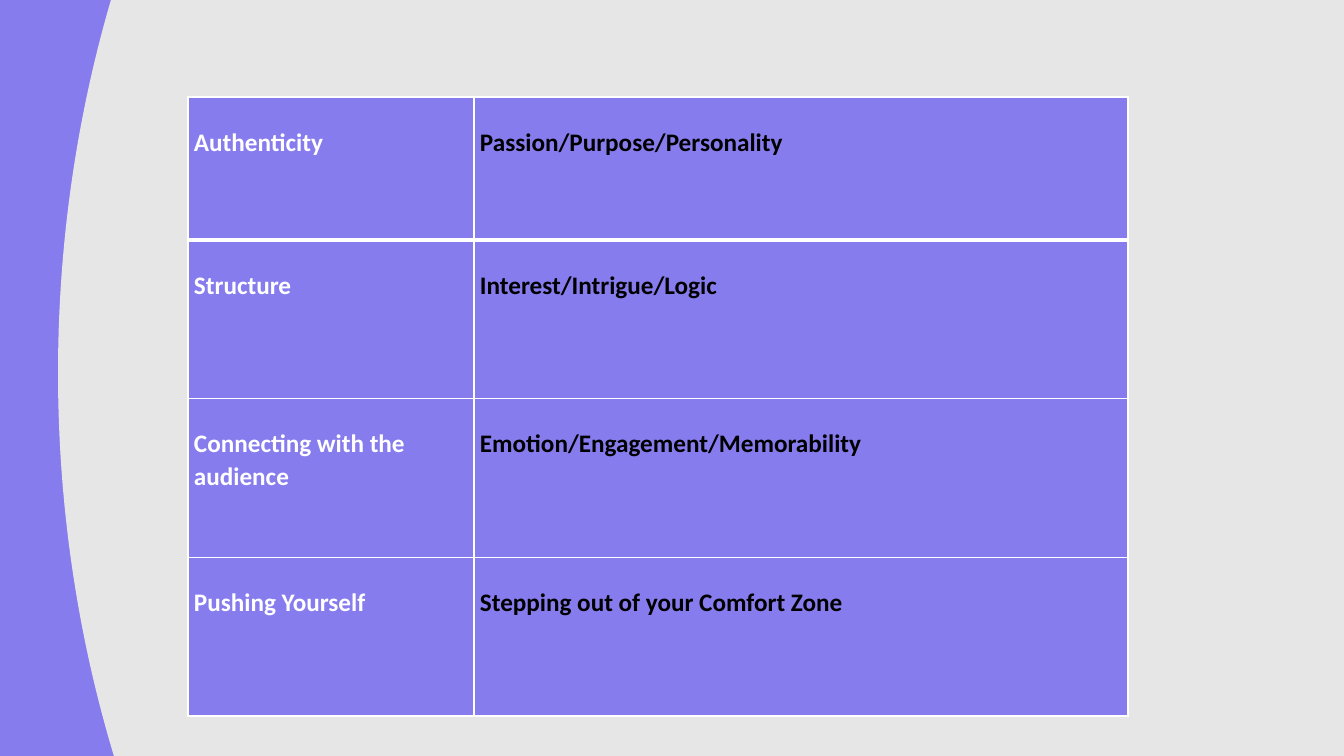
"""Build a slide with a table of speaking qualities beside a curved band."""
import pptx
import pptx.dml.color
import pptx.enum.shapes
import pptx.oxml
import pptx.oxml.ns
import pptx.util

EMU_PER_PX = 914400 / 100.8
SLIDE_BOX = (0, 0, 1344, 756)
ELLIPSE_BOX = (58, -711, 1733, 2168)
TABLE_BOX = (188, 97, 940, 619)
LABEL_WIDTH = 286
HEADER_HEIGHT = 143
PURPLE, GREY, WHITE, BLACK = "877CEE", "E7E6E6", "FFFFFF", "000000"
QUALITIES = [
    ("Authenticity", "Passion/Purpose/Personality"),
    ("Structure", "Interest/Intrigue/Logic"),
    ("Connecting with the audience", "Emotion/Engagement/Memorability"),
    ("Pushing Yourself", "Stepping out of your Comfort Zone"),
]


def px(length):
    """Turn pixels into EMU."""
    return pptx.util.Emu(round(length * EMU_PER_PX))


def color(value):
    """Turn a hex string into a colour."""
    return pptx.dml.color.RGBColor.from_string(value)


def add_plain_shape(slide, kind, box, fill):
    """Add a filled shape without outline or shadow."""
    shape = slide.shapes.add_shape(kind, *map(px, box))
    shape.shadow.inherit = False
    shape.fill.solid()
    shape.fill.fore_color.rgb = color(fill)
    shape.line.fill.background()


def add_backdrop(slide, box, ellipse_box):
    """Cover the box in purple and lay the grey ellipse over it."""
    kinds = pptx.enum.shapes.MSO_SHAPE
    add_plain_shape(slide, kinds.RECTANGLE, box, PURPLE)
    add_plain_shape(slide, kinds.OVAL, ellipse_box, GREY)


def set_borders(cell, widths):
    """Draw white cell borders, with widths in points by side."""
    properties = cell._tc.get_or_add_tcPr()
    for side in "LRTB":
        width = pptx.util.Pt(widths[side])
        properties.append(pptx.oxml.parse_xml(
            f'<a:ln{side} {pptx.oxml.ns.nsdecls("a")} w="{width}"><a:solidFill>'
            f'<a:srgbClr val="{WHITE}"/></a:solidFill></a:ln{side}>'))


def format_cell(cell, text, text_color, widths):
    """Fill a cell and set its bold text."""
    set_borders(cell, widths)
    cell.fill.solid()
    cell.fill.fore_color.rgb = color(PURPLE)
    cell.margin_left = cell.margin_right = px(6)
    cell.margin_top, cell.margin_bottom = px(28), 0
    cell.text_frame.text = text
    paragraph = cell.text_frame.paragraphs[0]
    paragraph.line_spacing = 1.07
    paragraph.space_after = pptx.util.Pt(8)
    font = paragraph.runs[0].font
    font.name, font.size, font.bold = "Calibri", pptx.util.Pt(18), True
    font.color.rgb = color(text_color)


def add_qualities_table(slide, box):
    """Add the table of qualities and what each one covers."""
    width, height = box[2:]
    table = slide.shapes.add_table(len(QUALITIES), 2, *map(px, box)).table
    table.columns[0].width = px(LABEL_WIDTH)
    table.columns[1].width = px(width - LABEL_WIDTH)
    body_height = (height - HEADER_HEIGHT) / (len(QUALITIES) - 1)
    for row, texts in enumerate(QUALITIES):
        table.rows[row].height = px(body_height if row else HEADER_HEIGHT)
        widths = {"L": 1, "R": 1, "T": 3 if row == 1 else 1, "B": 1 if row else 3}
        for column, (text, text_color) in enumerate(zip(texts, (WHITE, BLACK))):
            format_cell(table.cell(row, column), text, text_color, widths)


def main():
    """Build and save the presentation."""
    presentation = pptx.Presentation()
    presentation.slide_width, presentation.slide_height = map(px, SLIDE_BOX[2:])
    slide = presentation.slides.add_slide(presentation.slide_layouts[6])
    add_backdrop(slide, SLIDE_BOX, ELLIPSE_BOX)
    add_qualities_table(slide, TABLE_BOX)
    presentation.save("out.pptx")


if __name__ == "__main__":
    main()
